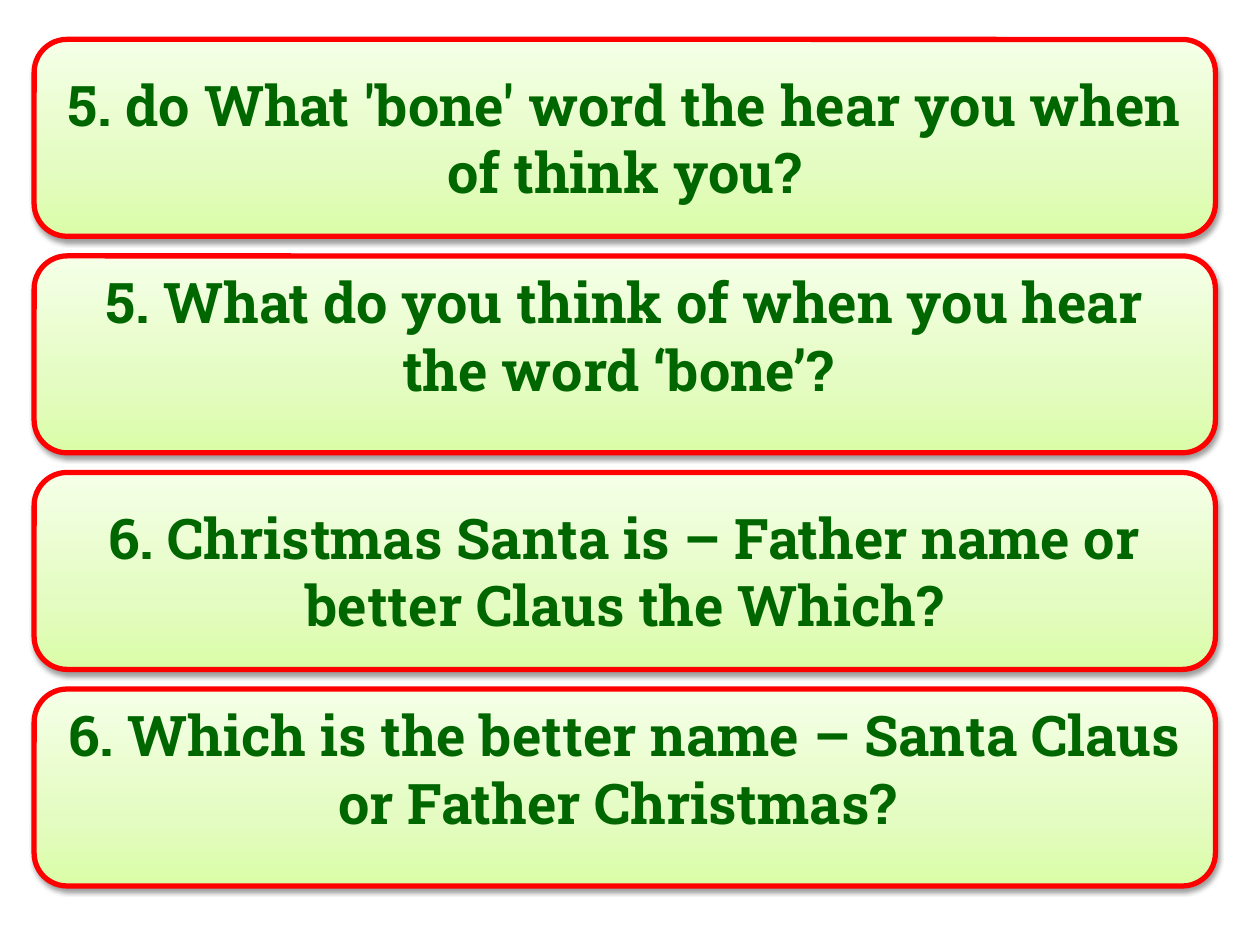
from copy import deepcopy
from dataclasses import dataclass

from lxml import etree
from pptx import Presentation
from pptx import util as u
from pptx.dml.color import RGBColor
from pptx.enum import shapes, text
from pptx.oxml.ns import qn

Pt = u.Pt

CARDS = [
    ("5. do What 'bone' word the hear you when of think you?", False),
    ("5. What do you think of when you hear the word ‘bone’? ", True),
    ("6. Christmas Santa is – Father name or better Claus the Which?", False),
    ("6. Which is the better name – Santa Claus or Father Christmas? ", True),
]


@dataclass(frozen=True)
class Theme:
    font: str = "Roboto Slab"
    size: float = 32
    ink: str = "006600"
    edge: str = "FF0000"
    fade: tuple = ((0, "DAFDA7"), (0.35, "E4FCC2"), (1, "F5FFE7"))
    shade: str = "000000"


LOOK = Theme()
LEFT, TOP, WIDTH, HEIGHT, STEP = 19.5, 22.5, 675, 112.5, 123.75
RAISE = 22


def paint(card):
    card.fill.gradient()
    card.fill.gradient_angle = 90
    stops = card._element.spPr.find(".//" + qn("a:gsLst"))
    stops.insert(1, deepcopy(stops[0]))
    for stop, (place, tint) in zip(card.fill.gradient_stops, LOOK.fade):
        stop.position = place
        stop.color.rgb = RGBColor.from_string(tint)
    card.line.color.rgb = RGBColor.from_string(LOOK.edge)
    card.line.width = Pt(3)


def shade(card):
    card.shadow.inherit = False
    group = card._element.spPr.find(qn("a:effectLst"))
    drop = etree.SubElement(
        group, qn("a:outerShdw"), blurRad=str(Pt(3.1)), dist=str(Pt(1.6)),
        dir="5400000", rotWithShape="0")
    tint = etree.SubElement(drop, qn("a:srgbClr"), val=LOOK.shade)
    etree.SubElement(tint, qn("a:alpha"), val="38000")


def write(card, words, raised):
    frame = card.text_frame
    frame.word_wrap = True
    frame.vertical_anchor = text.MSO_ANCHOR.MIDDLE
    if raised:
        frame.margin_bottom = Pt(3.6 + RAISE)
    para = frame.paragraphs[0]
    para.alignment = text.PP_ALIGN.CENTER
    run = para.add_run()
    run.text = words
    run.font.name = LOOK.font
    run.font.size = Pt(LOOK.size)
    run.font.bold = True
    run.font.color.rgb = RGBColor.from_string(LOOK.ink)


def main():
    deck = Presentation()
    deck.slide_width, deck.slide_height = Pt(720), Pt(540)
    slide = deck.slides.add_slide(deck.slide_layouts[6])
    for row, (words, raised) in enumerate(CARDS):
        card = slide.shapes.add_shape(
            shapes.MSO_SHAPE.ROUNDED_RECTANGLE,
            Pt(LEFT), Pt(TOP + row * STEP), Pt(WIDTH), Pt(HEIGHT))
        paint(card)
        shade(card)
        write(card, words, raised)
    deck.save("out.pptx")


if __name__ == "__main__":
    main()
